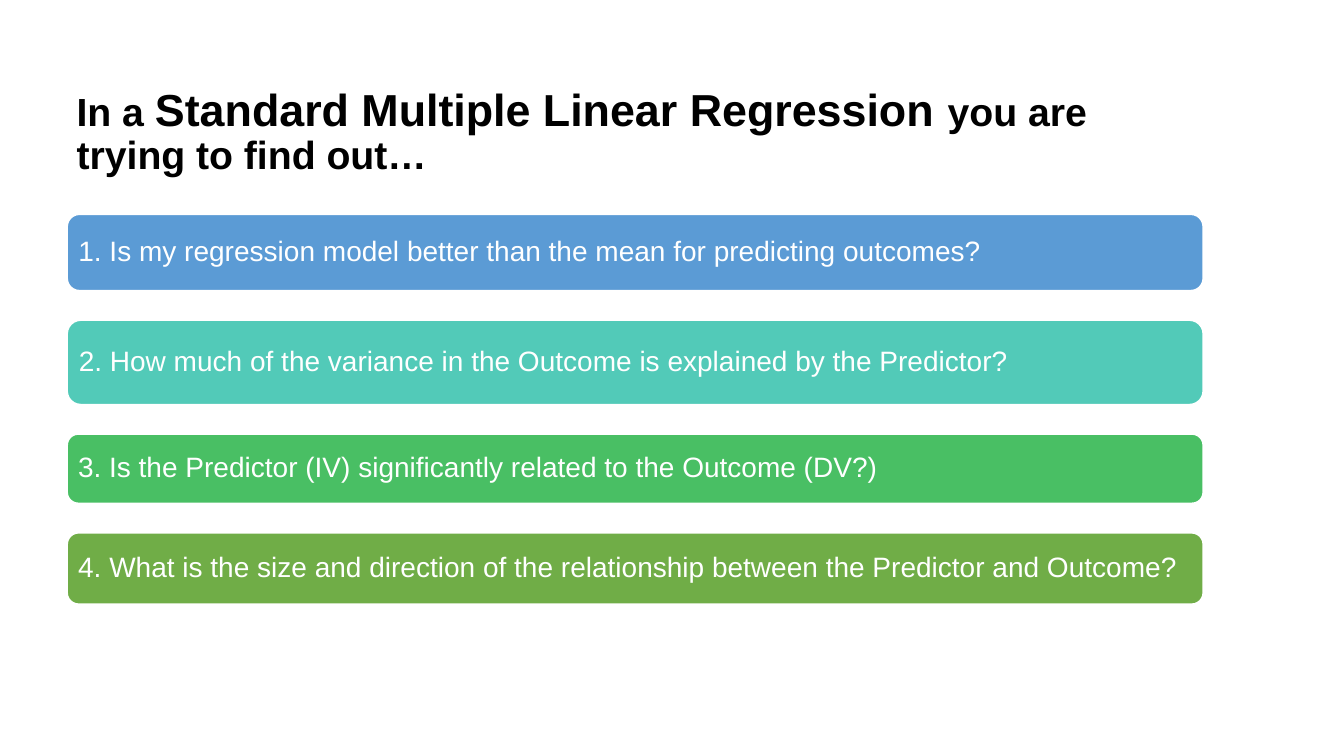
"""Build a slide listing the four questions a standard multiple linear regression answers."""
from pptx import Presentation
from pptx.dml.color import RGBColor
from pptx.enum.shapes import MSO_SHAPE as Shape
from pptx.enum.text import MSO_ANCHOR as Anchor, MSO_AUTO_SIZE as AutoSize, PP_ALIGN as Align
from pptx.util import Inches, Pt

TITLE = [
    ("In a ", 28),
    ("Standard Multiple Linear Regression ", 32),
    ("you are trying to find out…", 28),
]
QUESTIONS = [
    ("1. Is my regression model better than the mean for predicting outcomes?", "blue", 0.77),
    ("2. How much of the variance in the Outcome is explained by the Predictor?", "teal", 0.85),
    ("3. Is the Predictor (IV) significantly related to the Outcome (DV?)", "green", 0.70),
    ("4. What is the size and direction of the relationship between the Predictor and Outcome?",
     "olive", 0.72),
]
COLOURS = {
    "black": "000000", "white": "FFFFFF", "blue": "5B9BD5",
    "teal": "52CAB8", "green": "49BF64", "olive": "70AD47",
}
LEFT, WIDTH = 0.66, 11.28
TITLE_TOP, TITLE_HEIGHT = 0.81, 1.02
BARS_TOP, BAR_GAP = 2.12, 0.28


def colour(name):
    return RGBColor.from_string(COLOURS[name])


def write(shape, spans, ink="black", bold=False, inset=(0.1, 0.05)):
    frame = shape.text_frame
    frame.word_wrap = True
    frame.auto_size = AutoSize.NONE
    frame.vertical_anchor = Anchor.MIDDLE
    frame.margin_left = frame.margin_right = Inches(inset[0])
    frame.margin_top = frame.margin_bottom = Inches(inset[1])
    para = frame.paragraphs[0]
    para.alignment = Align.LEFT
    para.line_spacing = 0.9
    for text, size in spans:
        span = para.add_run()
        span.text = text
        span.font.name = "Arial"
        span.font.size = Pt(size)
        span.font.bold = bold
        span.font.color.rgb = colour(ink)


def add_bar(page, text, fill, top, height):
    bar = page.shapes.add_shape(
        Shape.ROUNDED_RECTANGLE, Inches(LEFT), Inches(top), Inches(WIDTH), Inches(height))
    bar.shadow.inherit = False
    bar.fill.solid()
    bar.fill.fore_color.rgb = colour(fill)
    bar.line.color.rgb = colour("white")
    bar.line.width = Pt(2)
    write(bar, [(text, 20)], ink="white", inset=(0.08, 0.08))


def main():
    deck = Presentation()
    deck.slide_width, deck.slide_height = Inches(13.33), Inches(7.5)
    page = deck.slides.add_slide(deck.slide_layouts.get_by_name("Title Only"))
    title = page.shapes.title
    title.left, title.top = Inches(LEFT), Inches(TITLE_TOP)
    title.width, title.height = Inches(WIDTH), Inches(TITLE_HEIGHT)
    write(title, TITLE, bold=True)
    top = BARS_TOP
    for text, fill, height in QUESTIONS:
        add_bar(page, text, fill, top, height)
        top += height + BAR_GAP
    deck.save("out.pptx")


if __name__ == "__main__":
    main()
